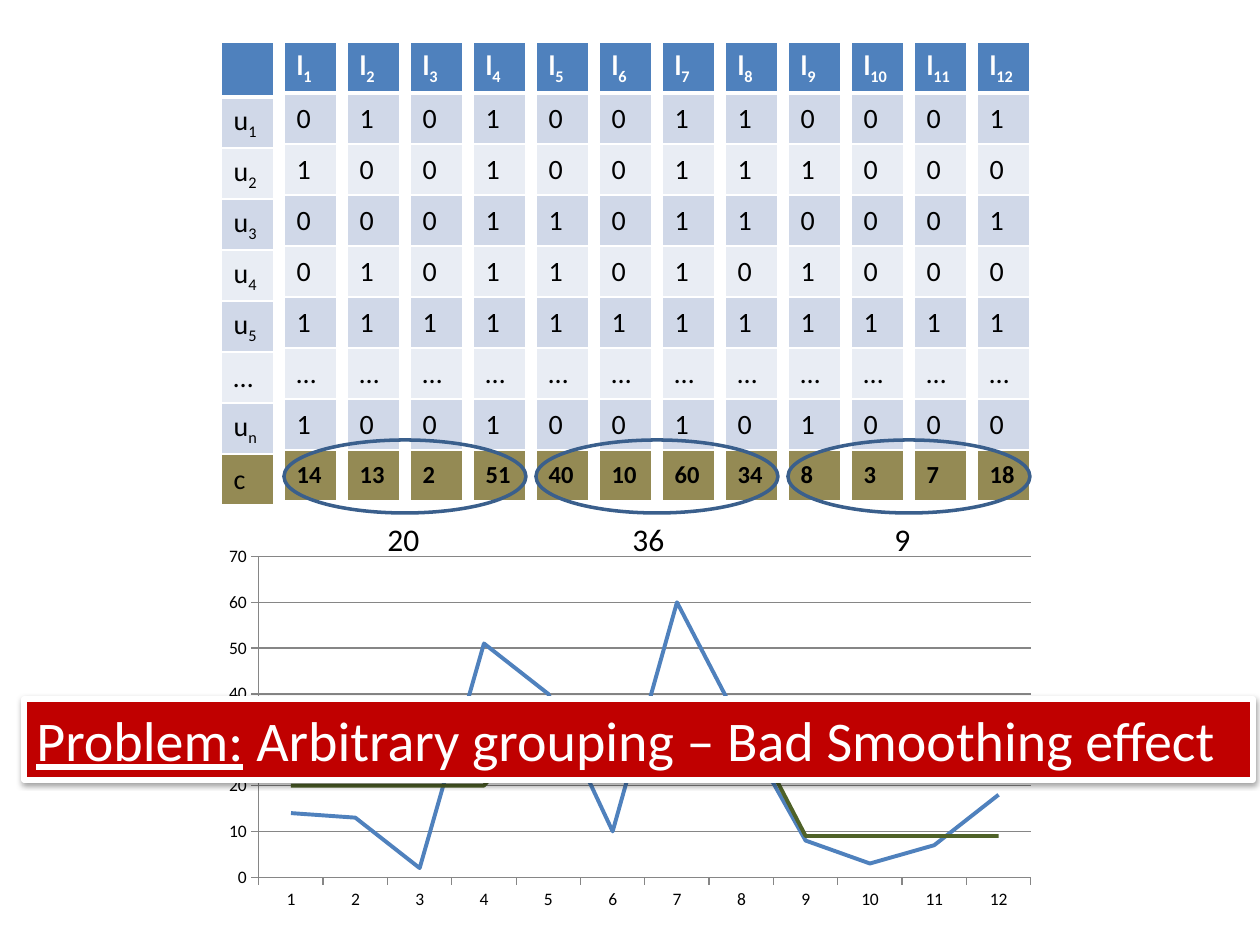
import pptx
import pptx.chart.data
import pptx.dml.color
import pptx.enum.chart
import pptx.enum.shapes
import pptx.enum.text
import pptx.oxml
import pptx.oxml.ns
import pptx.util
from lxml import etree

RGBColor = pptx.dml.color.RGBColor
BLUE = RGBColor(0x4F, 0x81, 0xBD)
BAND_DARK = RGBColor(0xD0, 0xD8, 0xE8)
BAND_LIGHT = RGBColor(0xE9, 0xED, 0xF4)
OLIVE = RGBColor(0x94, 0x8A, 0x54)
OVAL_BLUE = RGBColor(0x3A, 0x5F, 0x8C)
GREEN = RGBColor(0x4F, 0x62, 0x28)
GRAY = RGBColor(0x86, 0x86, 0x86)
RED = RGBColor(0xC0, 0x00, 0x00)
WHITE = RGBColor(0xFF, 0xFF, 0xFF)
BLACK = RGBColor(0x00, 0x00, 0x00)

PX = 914400 / 126
PITCH, COLUMN_WIDTH, ROW_HEIGHT = 63, 53, 51
TABLE_LEFT, TABLE_TOP = 221, 42

ITEM_ROWS = [
    [0, 1, 0, 1, 0, 0, 1, 1, 0, 0, 0, 1],
    [1, 0, 0, 1, 0, 0, 1, 1, 1, 0, 0, 0],
    [0, 0, 0, 1, 1, 0, 1, 1, 0, 0, 0, 1],
    [0, 1, 0, 1, 1, 0, 1, 0, 1, 0, 0, 0],
    [1] * 12,
    ["…"] * 12,
    [1, 0, 0, 1, 0, 0, 1, 0, 1, 0, 0, 0],
    [14, 13, 2, 51, 40, 10, 60, 34, 8, 3, 7, 18],
]
USERS = ["u_1", "u_2", "u_3", "u_4", "u_5", "…", "u_n", "c"]
CHART_COUNTS = [14, 13, 2, 51, 40, 10, 60, 33, 8, 3, 7, 18]
GROUP_MEANS = [20, 36, 9]
MEAN_LEFTS = [375, 620, 882]


def px(*lengths):
    """Turn pixel lengths into a list of EMU lengths."""
    return [pptx.util.Emu(round(length * PX)) for length in lengths]


def add_text(para, text, size=16, color=BLACK, bold=False, underline=False):
    """Append text to a paragraph; what follows "_" is set as a subscript."""
    for index, part in enumerate(text.split("_")):
        if not part:
            continue
        span = para.add_run()
        span.text = part
        span.font.name = "Calibri"
        span.font.size = pptx.util.Pt(size)
        span.font.bold = bold
        span.font.underline = underline
        span.font.color.rgb = color
        if index:
            span._r.get_or_add_rPr().set("baseline", "-25000")


deck = pptx.Presentation()
deck.slide_width, deck.slide_height = px(1260, 945)
page = deck.slides.add_slide(deck.slide_layouts[6])

# One single-column table per item, then the column of user names
columns = []
for item in range(12):
    texts = [f"l_{item + 1}"] + [str(row[item]) for row in ITEM_ROWS]
    columns.append((TABLE_LEFT + PITCH * (item + 1), texts))
columns.append((TABLE_LEFT + 63 - PITCH, [""] + USERS))

for left, texts in columns:
    is_item = texts[0] != ""
    frame = page.shapes.add_table(
        len(texts), 1, *px(left + 62 - PITCH + 1, TABLE_TOP, COLUMN_WIDTH, ROW_HEIGHT * len(texts)))
    table = frame.table
    table.first_row = table.horz_banding = False
    table.columns[0].width = px(COLUMN_WIDTH)[0]
    for index, text in enumerate(texts):
        header, total = index == 0, index == len(texts) - 1
        # The empty header cell stands a little taller than the others
        table.rows[index].height = px(ROW_HEIGHT if text else ROW_HEIGHT + 4)[0]
        cell = table.cell(index, 0)
        cell.vertical_anchor = pptx.enum.text.MSO_ANCHOR.MIDDLE
        if text:
            add_text(cell.text_frame.paragraphs[0], text,
                     size=14 if total and is_item else 16,
                     color=WHITE if header else BLACK,
                     bold=is_item and (header or total))
        properties = cell._tc.get_or_add_tcPr()
        for side in "LRTB":
            thick = (header and side == "B") or (index == 1 and side == "T")
            properties.append(pptx.oxml.parse_xml(
                f'<a:ln{side} {pptx.oxml.ns.nsdecls("a")} w="{38100 if thick else 12700}">'
                f'<a:solidFill><a:srgbClr val="{WHITE}"/></a:solidFill></a:ln{side}>'))
        cell.fill.solid()
        if header:
            cell.fill.fore_color.rgb = BLUE
        elif total:
            cell.fill.fore_color.rgb = OLIVE
        else:
            cell.fill.fore_color.rgb = BAND_DARK if index % 2 else BAND_LIGHT

# Groups of four counts, with the mean of each below
for group in range(3):
    oval = page.shapes.add_shape(
        pptx.enum.shapes.MSO_SHAPE.OVAL, *px(284 + group * 4 * PITCH, 440, 242, 73))
    oval.fill.background()
    oval.line.color.rgb = OVAL_BLUE
    oval.line.width = pptx.util.Pt(2)
    oval.shadow.inherit = False

for left, mean in zip(MEAN_LEFTS, GROUP_MEANS):
    box = page.shapes.add_textbox(*px(left, 514, 58 if mean > 9 else 42, 50))
    box.text_frame.word_wrap = False
    add_text(box.text_frame.paragraphs[0], str(mean), size=18)

# Line chart of the counts and their group means
chart_data = pptx.chart.data.CategoryChartData()
chart_data.categories = [str(number) for number in range(1, 13)]
chart_data.add_series("Counts", CHART_COUNTS)
chart_data.add_series("GS", [mean for mean in GROUP_MEANS for _ in range(4)])
chart = page.shapes.add_chart(
    pptx.enum.chart.XL_CHART_TYPE.LINE, *px(210, 539, 955, 378), chart_data).chart
chart.has_title = False
chart.has_legend = True
chart.legend.position = pptx.enum.chart.XL_LEGEND_POSITION.RIGHT
chart.legend.include_in_layout = False
chart.font.name = "Calibri"
chart.font.size = pptx.util.Pt(10)
chart.font.color.rgb = BLACK
chart.plots[0].vary_by_categories = False
for series, color in zip(chart.plots[0].series, [BLUE, GREEN]):
    series.smooth = False
    series.marker.style = pptx.enum.chart.XL_MARKER_STYLE.NONE
    series.format.line.color.rgb = color
    series.format.line.width = pptx.util.Pt(2.25)
for axis in (chart.category_axis, chart.value_axis):
    axis.major_tick_mark = pptx.enum.chart.XL_TICK_MARK.OUTSIDE
    axis.format.line.color.rgb = GRAY
chart.value_axis.minimum_scale = 0
chart.value_axis.maximum_scale = 70
chart.value_axis.major_unit = 10
chart.value_axis.has_major_gridlines = True
chart.value_axis.major_gridlines.format.line.color.rgb = GRAY

# Banner
banner = page.shapes.add_shape(
    pptx.enum.shapes.MSO_SHAPE.RECTANGLE, *px(24, 699, 1229, 81))
banner.fill.solid()
banner.fill.fore_color.rgb = RED
banner.line.color.rgb = WHITE
banner.line.width = pptx.util.Pt(3)
banner.shadow.inherit = False
effects = banner._element.spPr.find(pptx.oxml.ns.qn("a:effectLst"))
shadow = etree.SubElement(effects, pptx.oxml.ns.qn("a:outerShdw"),
                          blurRad="40000", dist="20000", dir="5400000", rotWithShape="0")
shade = etree.SubElement(shadow, pptx.oxml.ns.qn("a:srgbClr"), val=str(BLACK))
etree.SubElement(shade, pptx.oxml.ns.qn("a:alpha"), val="38000")
banner.text_frame.word_wrap = True
banner.text_frame.vertical_anchor = pptx.enum.text.MSO_ANCHOR.TOP
para = banner.text_frame.paragraphs[0]
para.alignment = pptx.enum.text.PP_ALIGN.LEFT
add_text(para, "Problem:", size=32, color=WHITE, underline=True)
add_text(para, " Arbitrary grouping – Bad Smoothing effect", size=32, color=WHITE)

deck.save("out.pptx")
